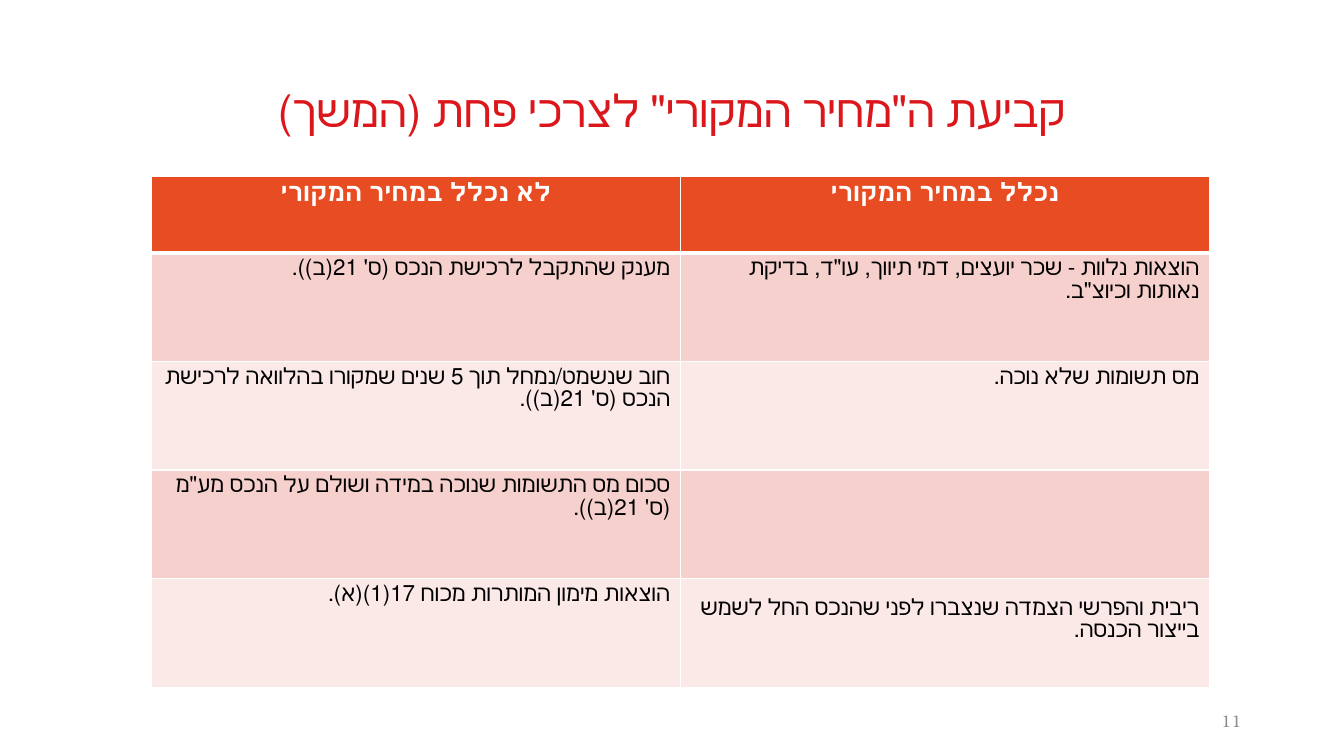
from dataclasses import dataclass

from lxml.etree import SubElement
from pptx import Presentation
from pptx.dml.color import RGBColor as RGB
from pptx.enum.text import MSO_ANCHOR as ANCHOR, PP_ALIGN as ALIGN
from pptx.oxml.ns import qn
from pptx.util import Pt


@dataclass(frozen=True)
class Theme:
    """Colours, fonts and type sizes of the deck."""
    title: str = "DB171C"
    header: str = "E84C22"
    bands: tuple = ("F6D0CD", "FBE9E8")
    white: str = "FFFFFF"
    body: str = "000000"
    muted: str = "8C8C8C"
    title_font: str = "Calibri"
    table_font: str = "Roboto"
    number_font: str = "TeX Gyre Bonum"
    title_size: int = 32
    header_size: int = 18
    body_size: int = 16
    number_size: int = 12


THEME = Theme()
TITLE = 'קביעת ה"מחיר המקורי" לצרכי פחת (המשך)'
HEADERS = ("לא נכלל במחיר המקורי", "נכלל במחיר המקורי")
ROWS = (
    ("מענק שהתקבל לרכישת הנכס (ס' 21(ב)).",
     'הוצאות נלוות - שכר יועצים, דמי תיווך, עו"ד, בדיקת נאותות וכיוצ"ב. '),
    ("חוב שנשמט/נמחל תוך 5 שנים שמקורו בהלוואה לרכישת הנכס (ס' 21(ב)).",
     "מס תשומות שלא נוכה. "),
    ("סכום מס התשומות שנוכה במידה ושולם על הנכס מע\"מ (ס' 21(ב)).", ""),
    ("הוצאות מימון המותרות מכוח 17(1)(א).",
     "ריבית והפרשי הצמדה שנצברו לפני שהנכס החל לשמש בייצור הכנסה."),
)


def write(tf, text, font, size, color, align, bold=False, rtl=True):
    """Set one formatted paragraph, right to left by default."""
    tf.text = text
    p = tf.paragraphs[0]
    p.alignment = align
    if rtl:
        p._p.get_or_add_pPr().set("rtl", "1")
    for r in p.runs:
        r.font.name, r.font.size, r.font.bold = font, Pt(size), bold
        r.font.color.rgb = RGB.from_string(color)
    return p


def add_title(slide, box):
    """Place the slide title in its box."""
    sp = slide.shapes.title
    sp.left, sp.top, sp.width, sp.height = map(Pt, box)
    tf = sp.text_frame
    tf.vertical_anchor = ANCHOR.MIDDLE
    p = write(tf, TITLE, THEME.title_font, THEME.title_size, THEME.title, ALIGN.CENTER)
    p.line_spacing = 0.9


def style_cell(cell, fill, bottom=1):
    """Give a cell its white borders and its fill."""
    tc_pr = cell._tc.get_or_add_tcPr()
    for side, width in (("L", 1), ("R", 1), ("T", 1), ("B", bottom)):
        ln = SubElement(tc_pr, qn(f"a:ln{side}"), w=str(Pt(width)))
        solid = SubElement(ln, qn("a:solidFill"))
        SubElement(solid, qn("a:srgbClr"), val=THEME.white)
    cell.fill.solid()
    cell.fill.fore_color.rgb = RGB.from_string(fill)


def add_price_table(slide, box, header_height):
    """Build the two-column comparison table within its box."""
    left, top, width, height = box
    table = slide.shapes.add_table(len(ROWS) + 1, len(HEADERS), *map(Pt, box)).table
    for col in table.columns:
        col.width = Pt(width / len(HEADERS))
    for row in table.rows:
        row.height = Pt((height - header_height) / len(ROWS))
    table.rows[0].height = Pt(header_height)
    for c, text in enumerate(HEADERS):
        cell = table.cell(0, c)
        style_cell(cell, THEME.header, bottom=3)
        write(cell.text_frame, text, THEME.table_font, THEME.header_size,
              THEME.white, ALIGN.CENTER, bold=True)
    for r, texts in enumerate(ROWS, start=1):
        for c, text in enumerate(texts):
            cell = table.cell(r, c)
            style_cell(cell, THEME.bands[(r - 1) % 2])
            write(cell.text_frame, text, THEME.table_font, THEME.body_size,
                  THEME.body, ALIGN.RIGHT)
    interest = table.cell(len(ROWS), 1)
    interest.vertical_anchor = ANCHOR.MIDDLE
    interest.margin_bottom = Pt(22)


def add_page_number(slide, box, number):
    """Place the page number in its box."""
    tf = slide.shapes.add_textbox(*map(Pt, box)).text_frame
    tf.word_wrap = True
    tf.vertical_anchor = ANCHOR.MIDDLE
    write(tf, str(number), THEME.number_font, THEME.number_size, THEME.muted,
          ALIGN.RIGHT, rtl=False)


def main():
    """Build and save the slide."""
    prs = Presentation()
    prs.slide_width, prs.slide_height = Pt(960), Pt(540)
    slide = prs.slides.add_slide(prs.slide_layouts[5])
    add_title(slide, (66, 28.8, 828, 104.4))
    add_price_table(slide, (108, 126, 756, 365), header_height=54.6)
    add_page_number(slide, (678, 500.5, 216, 28.8), 11)
    prs.save("out.pptx")


if __name__ == "__main__":
    main()
